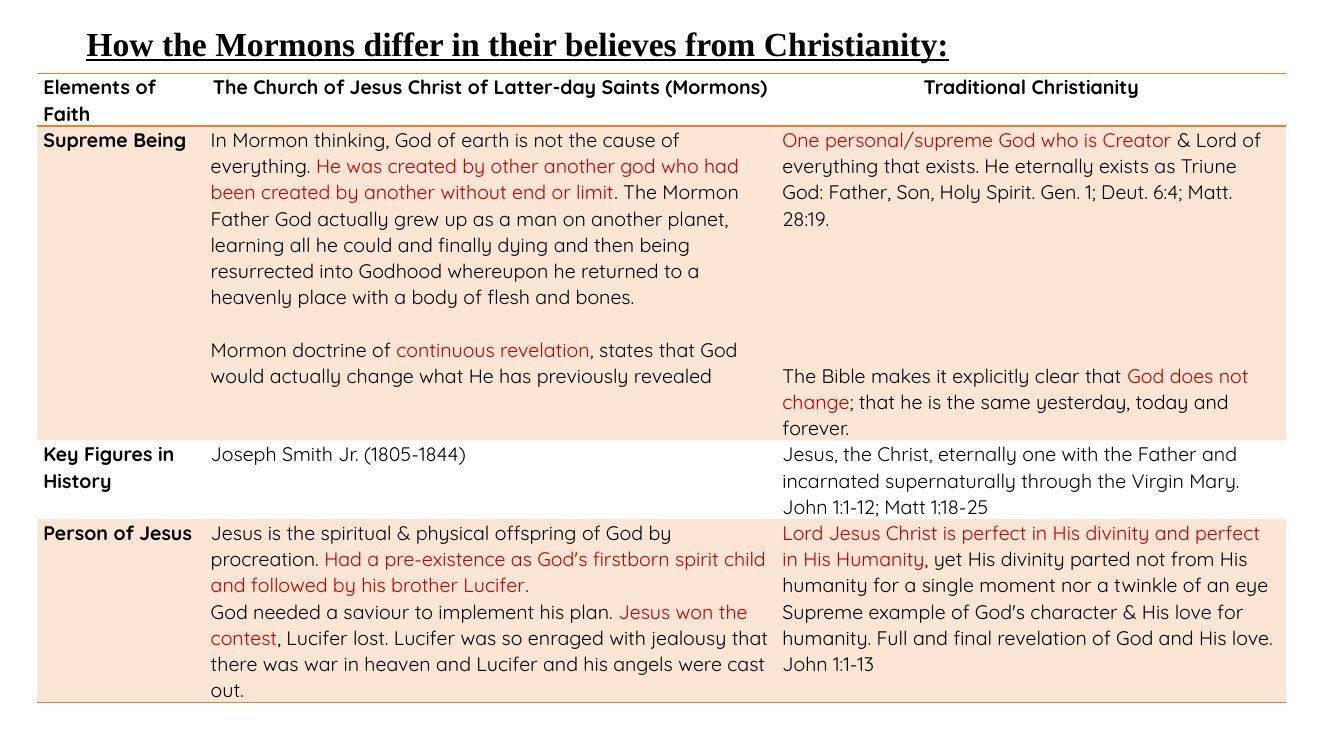
from lxml.etree import SubElement
from pptx import Presentation
from pptx.dml.color import RGBColor
from pptx.enum.text import MSO_ANCHOR, PP_ALIGN
from pptx.oxml.ns import qn
from pptx.util import Inches, Pt

BLACK, RED, ORANGE = "000000", "C00000", "ED7D31"
LINE_PITCH = 18.72  # points from one line of table text to the next
NO_STYLE = "{2D5ABB26-0587-4C30-8999-92F81FD0307C}"


def color(hex_string):
    return RGBColor.from_string(hex_string)


def add_border(cell, side):
    line = SubElement(cell._tc.get_or_add_tcPr(), qn(f"a:{side}"), w=str(Pt(1)))
    fill = SubElement(line, qn("a:solidFill"))
    SubElement(fill, qn("a:srgbClr"), val=ORANGE)


presentation = Presentation()
presentation.slide_width, presentation.slide_height = Inches(13.33), Inches(7.5)
slide = presentation.slides.add_slide(presentation.slide_layouts[6])

# Title
title = slide.shapes.add_textbox(Inches(0.76), Inches(0.15), Inches(8.84), Inches(0.55))
title.text_frame.word_wrap = False
title.text_frame.vertical_anchor = MSO_ANCHOR.MIDDLE
paragraph = title.text_frame.paragraphs[0]
paragraph.text = "How the Mormons differ in their believes from Christianity:"
paragraph.font.name, paragraph.font.size = "Times New Roman", Pt(24)
paragraph.font.bold = paragraph.font.underline = True
paragraph.font.color.rgb = color(BLACK)

# Table content: each cell lists (blank lines before, text); text between bars is red
rows = [
    [
        [(0, "Elements of Faith")],
        [(0, "The Church of Jesus Christ of Latter-day Saints (Mormons)")],
        [(0, "Traditional Christianity")],
    ],
    [
        [(0, "Supreme Being")],
        [
            (0, "In Mormon thinking, God of earth is not the cause of everything. "
                "|He was created by other another god who had been created by another "
                "without end or limit|. The Mormon Father God actually grew up as a man on "
                "another planet, learning all he could and finally dying and then being "
                "resurrected into Godhood whereupon he returned to a heavenly place with a "
                "body of flesh and bones."),
            (1, "Mormon doctrine of |continuous revelation|, states that God would actually "
                "change what He has previously revealed"),
        ],
        [
            (0, "|One personal/supreme God who is Creator |& Lord of everything that exists. "
                "He eternally exists as Triune God: Father, Son, Holy Spirit. Gen. 1; "
                "Deut. 6:4; Matt. 28:19."),
            (5, "The Bible makes it explicitly clear that |God does not change|; that he is "
                "the same yesterday, today and forever."),
        ],
    ],
    [
        [(0, "Key Figures in History")],
        [(0, "Joseph Smith Jr. (1805-1844)")],
        [(0, "Jesus, the Christ, eternally one with the Father and incarnated "
             "supernaturally through the Virgin Mary. John 1:1-12; Matt 1:18-25")],
    ],
    [
        [(0, "Person of Jesus")],
        [
            (0, "Jesus is the spiritual & physical offspring of God by procreation. "
                "|Had a pre-existence as God's firstborn spirit child and followed by his "
                "brother Lucifer|."),
            (0, "God needed a saviour to implement his plan. |Jesus won the contest|, Lucifer "
                "lost. Lucifer was so enraged with jealousy that there was war in heaven and "
                "Lucifer and his angels were cast out."),
        ],
        [(0, "|Lord Jesus Christ is perfect in His divinity and perfect in His Humanity|, yet "
             "His divinity parted not from His humanity for a single moment nor a twinkle of "
             "an eye Supreme example of God's character & His love for humanity. Full and "
             "final revelation of God and His love. John 1:1-13")],
    ],
]
column_widths = [1.66, 5.67, 5.06]
lines_per_row = [2, 12, 3, 7]

# Table frame
frame = slide.shapes.add_table(
    len(rows), len(column_widths), Inches(0.37), Inches(0.73),
    Inches(sum(column_widths)), Pt(sum(lines_per_row) * LINE_PITCH))
table = frame.table
table.horz_banding = False
next(frame.element.iter(qn("a:tableStyleId"))).text = NO_STYLE
for column, width in zip(table.columns, column_widths):
    column.width = Inches(width)
for row, lines in zip(table.rows, lines_per_row):
    row.height = Pt(lines * LINE_PITCH)

# Cells
for row_index, row_content in enumerate(rows):
    for column_index, paragraphs in enumerate(row_content):
        cell = table.cell(row_index, column_index)
        cell.margin_left = cell.margin_right = Inches(0.06)
        cell.margin_top = cell.margin_bottom = 0

        # Lines around the header and under the last row, tint on every second row
        if row_index == 0:
            add_border(cell, "lnT")
        if row_index in (0, len(rows) - 1):
            add_border(cell, "lnB")
        if row_index % 2:
            cell.fill.solid()
            cell.fill.fore_color.rgb = color(ORANGE)
            tint = next(cell._tc.tcPr.find(qn("a:solidFill")).iter(qn("a:srgbClr")))
            SubElement(tint, qn("a:alpha"), val="20000")
        else:
            cell.fill.background()

        for index, (blank_lines, text) in enumerate(paragraphs):
            text_frame = cell.text_frame
            paragraph = text_frame.add_paragraph() if index else text_frame.paragraphs[0]
            paragraph.line_spacing = 1.07
            if blank_lines:
                paragraph.space_before = Pt(blank_lines * LINE_PITCH)
            if row_index == 0 and column_index:
                paragraph.alignment = PP_ALIGN.CENTER
            paragraph.font.name, paragraph.font.size = "Quicksand", Pt(14)
            paragraph.font.bold = row_index == 0 or column_index == 0
            for part_index, part in enumerate(text.split("|")):
                if part:
                    run = paragraph.add_run()
                    run.text = part
                    run.font.color.rgb = color(RED if part_index % 2 else BLACK)

presentation.save("out.pptx")
